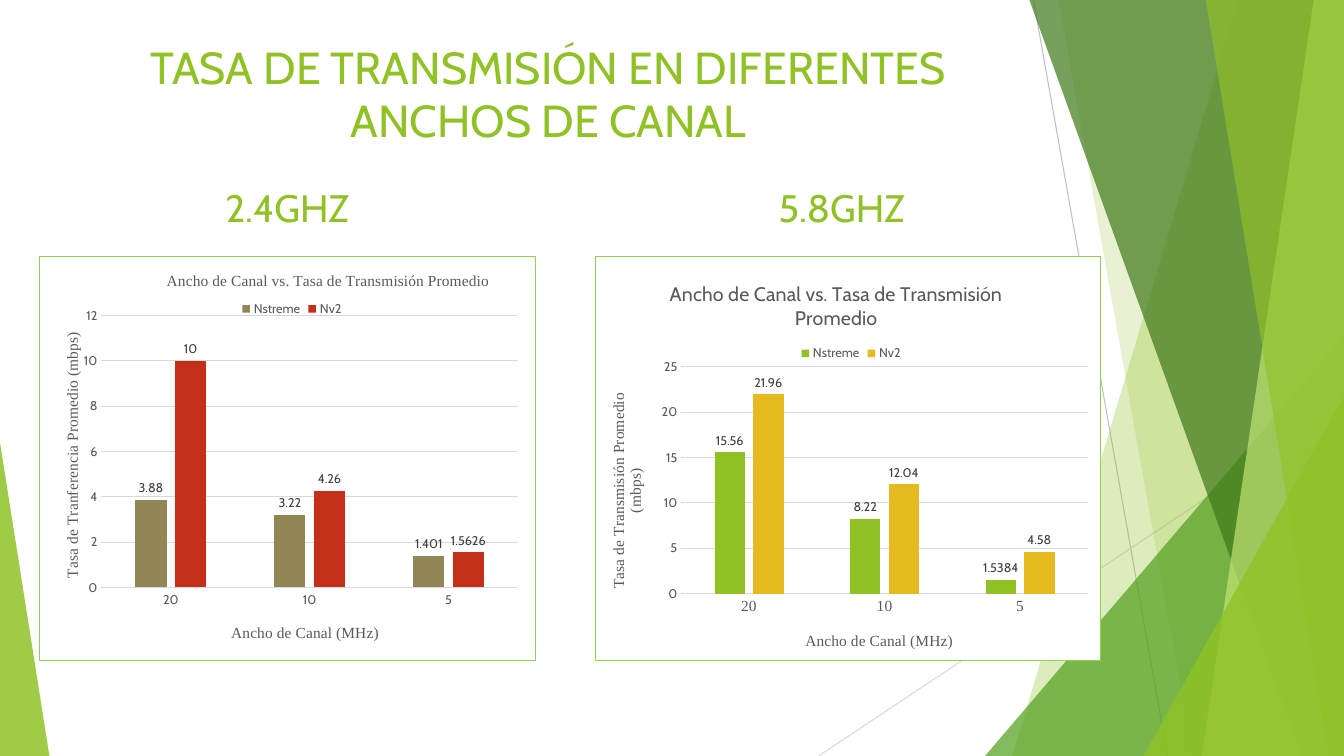
from dataclasses import dataclass
from typing import Any

import lxml.etree
import pptx
import pptx.chart.data
import pptx.dml.color
import pptx.enum.chart
import pptx.enum.shapes
import pptx.enum.text
import pptx.oxml.ns
import pptx.util

Inches = pptx.util.Inches
RGBColor = pptx.dml.color.RGBColor
qn = pptx.oxml.ns.qn

LEAF = RGBColor(0x90, 0xC2, 0x26)
GRASS = RGBColor(0x54, 0xA0, 0x21)
FOREST = RGBColor(0x3F, 0x78, 0x19)
LIME = RGBColor(0xC0, 0xE4, 0x74)
KHAKI = RGBColor(0x91, 0x86, 0x55)
RED = RGBColor(0xC4, 0x2F, 0x1A)
GOLD = RGBColor(0xE6, 0xB9, 0x1E)
BORDER = RGBColor(0x92, 0xD0, 0x50)
WHITE = RGBColor(0xFF, 0xFF, 0xFF)
SILVER = RGBColor(0xBF, 0xBF, 0xBF)
PALE = RGBColor(0xD9, 0xD9, 0xD9)
AXIS_GRAY = RGBColor(0x59, 0x59, 0x59)
LABEL_GRAY = RGBColor(0x40, 0x40, 0x40)

SANS = "Cabin"
SERIF = "Times New Roman"
WIDTH, HEIGHT = 13.33, 7.5
CHANNELS = ("20", "10", "5")
PROTOCOLS = ("Nstreme", "Nv2")


@dataclass(frozen=True)
class Ray:
    start: tuple[float, float]
    end: tuple[float, float]
    color: RGBColor


@dataclass(frozen=True)
class Band:
    top_left: float
    top_right: float
    bottom_right: float
    bottom_left: float
    color: RGBColor
    opacity: int


@dataclass(frozen=True)
class Spike:
    box: tuple[float, float, float, float]
    apex: float
    color: RGBColor
    opacity: int


@dataclass(frozen=True)
class Panel:
    heading: str
    heading_center: float
    box: tuple[float, float, float, float]
    rates: tuple[tuple[float, ...], ...]
    colors: tuple[RGBColor, ...]
    rate_title: str
    title_font: tuple[str, float]
    channel_font: tuple[str, float]
    top: float
    step: float
    plot: tuple[float, ...]
    title_places: tuple[tuple[float, float], ...]
    legend_place: tuple[float, float]


RAYS = (
    Ray((10.25, 0), (11.58, HEIGHT), SILVER),
    Ray((WIDTH, 4.03), (8.12, HEIGHT), PALE),
)
FACETS = (
    Band(12.28, WIDTH, WIDTH, 10.04, LEAF, 30),
    Band(10.5, WIDTH, WIDTH, 11.83, LEAF, 20),
    Spike((9.77, 3.33, 3.56, 4.17), 1, GRASS, 72),
    Band(10.21, WIDTH, WIDTH, 12.91, FOREST, 70),
    Band(13.03, WIDTH, WIDTH, 11.92, LIME, 70),
    Band(11.96, WIDTH, WIDTH, 13.18, LEAF, 65),
    Spike((11.34, 3.93, 1.99, 3.57), 1, LEAF, 80),
    Spike((0, 4.39, 0.49, 3.11), 0, LEAF, 85),
)
PANELS = (
    Panel("2.4GHZ", 2.85, (0.39, 2.54, 4.93, 4.02),
          ((3.88, 3.22, 1.401), (10, 4.26, 1.5626)), (KHAKI, RED),
          "Tasa de Tranferencia Promedio (mbps)", (SERIF, 11), (SANS, 9), 12, 2,
          (0.124, 0.146, 0.84, 0.673),
          ((0.25, 0.03), (0.38, 0.9), (0.04, 0.18)), (0.4, 0.1)),
    Panel("5.8GHZ", 8.35, (5.9, 2.54, 5.02, 4.02),
          ((15.56, 8.22, 1.5384), (21.96, 12.04, 4.58)), (LEAF, GOLD),
          "Tasa de Transmisión Promedio\n(mbps)", (SANS, 14), (SERIF, 11), 25, 5,
          (0.17, 0.273, 0.805, 0.561),
          ((0.14, 0.05), (0.41, 0.92), (0.02, 0.33)), (0.4, 0.21)),
)


def apply_format(target: Any, values: dict[str, Any]) -> None:
    for name, value in values.items():
        setattr(target, name, value)


def style_font(font: Any, face: str, size: float, color: RGBColor) -> None:
    apply_format(font, {"name": face, "size": pptx.util.Pt(size), "bold": False})
    font.color.rgb = color


def draw_ray(slide: Any, ray: Ray) -> None:
    ends = [Inches(value) for value in ray.start + ray.end]
    line = slide.shapes.add_connector(pptx.enum.shapes.MSO_CONNECTOR.STRAIGHT, *ends)
    line.line.color.rgb = ray.color
    line.line.width = pptx.util.Pt(0.75)
    lxml.etree.SubElement(line.element.spPr, qn("a:effectLst"))


def draw_facet(slide: Any, facet: Band | Spike) -> None:
    if isinstance(facet, Band):
        builder = slide.shapes.build_freeform(Inches(facet.top_left), 0)
        corners = ((facet.top_right, 0), (facet.bottom_right, HEIGHT), (facet.bottom_left, HEIGHT))
        builder.add_line_segments([(Inches(x), Inches(y)) for x, y in corners])
        shape = builder.convert_to_shape()
    else:
        triangle = pptx.enum.shapes.MSO_SHAPE.ISOSCELES_TRIANGLE
        shape = slide.shapes.add_shape(triangle, *map(Inches, facet.box))
        shape.adjustments[0] = facet.apex
    shape.shadow.inherit = False
    shape.fill.solid()
    shape.fill.fore_color.rgb = facet.color
    shape.line.fill.background()
    tint = shape.element.spPr.find(".//" + qn("a:srgbClr"))
    lxml.etree.SubElement(tint, qn("a:alpha"), val=str(facet.opacity * 1000))


def write_heading(slide: Any, text: str, box: tuple[float, ...], size: float) -> None:
    frame = slide.shapes.add_textbox(*map(Inches, box)).text_frame
    apply_format(frame, {"word_wrap": True, "text": text})
    paragraph = frame.paragraphs[0]
    paragraph.alignment = pptx.enum.text.PP_ALIGN.CENTER
    style_font(paragraph.runs[0].font, SANS, size, LEAF)


def write_title(owner: Any, text: str, face: str, size: float) -> None:
    owner.text_frame.text = text
    for paragraph in owner.text_frame.paragraphs:
        style_font(paragraph.runs[0].font, face, size, AXIS_GRAY)


def place(part: Any, values: tuple[float, ...], inner: bool = False) -> None:
    for old in part.findall(qn("c:layout")):
        part.remove(old)
    layout = lxml.etree.Element(qn("c:layout"))
    manual = lxml.etree.SubElement(layout, qn("c:manualLayout"))
    settings = [("layoutTarget", "inner")] if inner else []
    settings += [("xMode", "edge"), ("yMode", "edge"), *zip("xywh", values)]
    for tag, value in settings:
        lxml.etree.SubElement(manual, qn("c:" + tag), val=str(value))
    overlay = part.find(qn("c:overlay"))
    if overlay is None:
        part.insert(0, layout)
    else:
        overlay.addprevious(layout)


def frame_chart(chart: Any) -> None:
    area = lxml.etree.Element(qn("c:spPr"))
    outline = lxml.etree.Element(qn("a:ln"), w=str(pptx.util.Pt(0.75)))
    for parent, color in ((area, WHITE), (outline, BORDER)):
        solid = lxml.etree.SubElement(parent, qn("a:solidFill"))
        lxml.etree.SubElement(solid, qn("a:srgbClr"), val=str(color))
    area.append(outline)
    chart.element.find(qn("c:chart")).addnext(area)


def draw_panel(slide: Any, panel: Panel) -> None:
    write_heading(slide, panel.heading, (panel.heading_center - 1.5, 1.78, 3, 0.6), 27.3)
    data = pptx.chart.data.CategoryChartData()
    data.categories = CHANNELS
    for protocol, rates in zip(PROTOCOLS, panel.rates):
        data.add_series(protocol, rates)
    kind = pptx.enum.chart.XL_CHART_TYPE.COLUMN_CLUSTERED
    chart = slide.shapes.add_chart(kind, *map(Inches, panel.box), data).chart
    style_font(chart.font, SANS, 10, AXIS_GRAY)
    frame_chart(chart)

    write_title(chart.chart_title, "Ancho de Canal vs. Tasa de Transmisión Promedio", *panel.title_font)
    channels, rates = chart.category_axis, chart.value_axis
    write_title(channels.axis_title, "Ancho de Canal (MHz)", SERIF, 11)
    write_title(rates.axis_title, panel.rate_title, SERIF, 11)
    for axis, font in ((channels, panel.channel_font), (rates, (SANS, 9))):
        no_tick = pptx.enum.chart.XL_TICK_MARK.NONE
        apply_format(axis, {"major_tick_mark": no_tick, "minor_tick_mark": no_tick})
        style_font(axis.tick_labels.font, *font, AXIS_GRAY)
    apply_format(rates, {"minimum_scale": 0, "maximum_scale": panel.top,
                         "major_unit": panel.step, "has_major_gridlines": True})
    rates.format.line.fill.background()
    for line in (channels.format.line, rates.major_gridlines.format.line):
        line.color.rgb = PALE
        line.width = pptx.util.Pt(0.75)

    chart.has_legend = True
    apply_format(chart.legend, {"position": pptx.enum.chart.XL_LEGEND_POSITION.TOP,
                                "include_in_layout": False})
    style_font(chart.legend.font, SANS, 9, AXIS_GRAY)
    columns = chart.plots[0]
    apply_format(columns, {"gap_width": 219, "overlap": -27, "vary_by_categories": False})
    for series, color in zip(columns.series, panel.colors):
        series.format.fill.solid()
        series.format.fill.fore_color.rgb = color
        apply_format(series.data_labels, {
            "show_value": True, "position": pptx.enum.chart.XL_LABEL_POSITION.OUTSIDE_END})
        style_font(series.data_labels.font, SANS, 9, LABEL_GRAY)

    for title, spot in zip(list(chart.element.iter(qn("c:title"))), panel.title_places):
        place(title, spot)
    place(next(chart.element.iter(qn("c:legend"))), panel.legend_place)
    place(next(chart.element.iter(qn("c:plotArea"))), panel.plot, inner=True)


def main() -> None:
    deck = pptx.Presentation()
    apply_format(deck, {"slide_width": Inches(WIDTH), "slide_height": Inches(HEIGHT)})
    slide = deck.slides.add_slide(deck.slide_layouts[6])
    for ray in RAYS:
        draw_ray(slide, ray)
    for facet in FACETS:
        draw_facet(slide, facet)
    write_heading(slide, "TASA DE TRANSMISIÓN EN DIFERENTES ANCHOS DE CANAL", (0.74, 0.34, 9.4, 1.44), 32)
    for panel in PANELS:
        draw_panel(slide, panel)
    deck.save("out.pptx")


if __name__ == "__main__":
    main()
